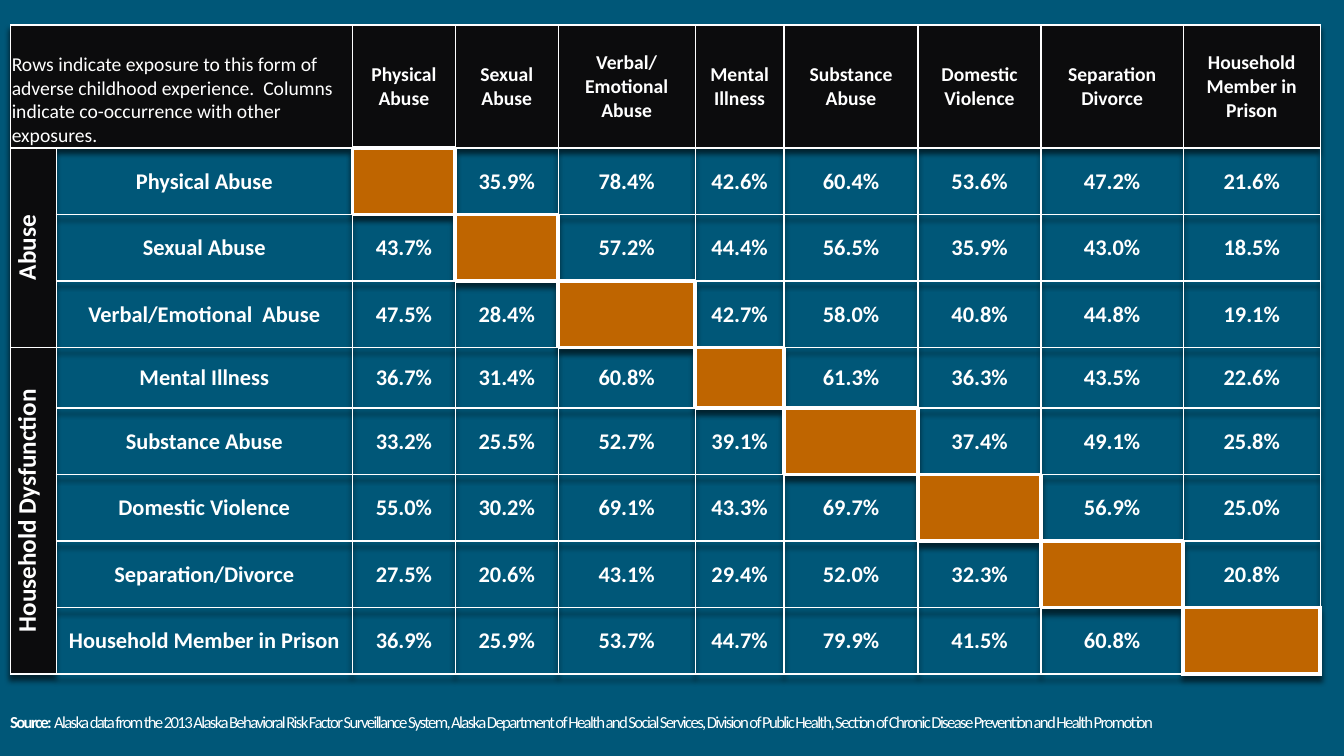
from dataclasses import dataclass

from lxml import etree
from pptx import Presentation, util as u
from pptx.dml.color import RGBColor
from pptx.enum import text
from pptx.oxml import parse_xml
from pptx.oxml.ns import nsdecls, qn

WIDTH, HEIGHT = u.Inches(13.33), u.Inches(7.5)
PLAIN_TABLE = "{2D5ABB26-0587-4C30-8999-92F81FD0307C}"
NEIGHBOURS = {"L": (0, -1), "R": (0, 1), "T": (-1, 0), "B": (1, 0)}

COLUMNS = [0.45, 2.94, 1.02, 1.02, 1.36, 0.88, 1.33, 1.22, 1.41, 1.36]
ROWS = [1.22, 0.66, 0.66, 0.66, 0.6, 0.66, 0.66, 0.66, 0.66]
LEGEND = ("Rows indicate exposure to this form of adverse childhood experience.  "
          "Columns indicate co-occurrence with other exposures.")
HEADINGS = ["Physical Abuse", "Sexual Abuse", "Verbal/ Emotional Abuse", "Mental Illness",
            "Substance Abuse", "Domestic Violence", "Separation Divorce",
            "Household Member in Prison"]
GROUPS = [("Abuse", 1, 3), ("Household Dysfunction", 4, 8)]
EXPOSURES = {
    "Physical Abuse": [35.9, 78.4, 42.6, 60.4, 53.6, 47.2, 21.6],
    "Sexual Abuse": [43.7, 57.2, 44.4, 56.5, 35.9, 43.0, 18.5],
    "Verbal/Emotional  Abuse": [47.5, 28.4, 42.7, 58.0, 40.8, 44.8, 19.1],
    "Mental Illness": [36.7, 31.4, 60.8, 61.3, 36.3, 43.5, 22.6],
    "Substance Abuse": [33.2, 25.5, 52.7, 39.1, 37.4, 49.1, 25.8],
    "Domestic Violence": [55.0, 30.2, 69.1, 43.3, 69.7, 56.9, 25.0],
    "Separation/Divorce": [27.5, 20.6, 43.1, 29.4, 52.0, 32.3, 20.8],
    "Household Member in Prison": [36.9, 25.9, 53.7, 44.7, 79.9, 41.5, 60.8],
}
SOURCE = ("Alaska data from the 2013 Alaska Behavioral Risk Factor Surveillance System, "
          "Alaska Department of Health and Social Services, Division of Public Health, "
          "Section of Chronic Disease Prevention and Health Promotion")


@dataclass(frozen=True)
class Theme:
    font: str = "Calibri"
    ground: str = "005778"
    header: str = "0C0C0D"
    diagonal: str = "BF6500"
    ink: str = "FFFFFF"
    source_size: int = 12
    header_size: int = 14
    body_size: int = 16
    group_size: int = 18
    thin: int = 1
    thick: int = 3


def assign(target, values):
    for name, value in values.items():
        setattr(target, name, value)


def on_diagonal(row, column):
    return row >= 1 and column == row + 1


class SlideBuilder:
    def __init__(self, slide, theme):
        self.slide, self.theme = slide, theme
        self.paint(slide.background.fill, theme.ground)

    def paint(self, fill, color):
        fill.solid()
        fill.fore_color.rgb = RGBColor.from_string(color)

    def add_words(self, paragraph, words, size, bold=True):
        run = paragraph.add_run()
        run.text = words
        assign(run.font, {"name": self.theme.font, "size": u.Pt(size), "bold": bold})
        run.font.color.rgb = RGBColor.from_string(self.theme.ink)
        return run

    def source_line(self, left, top, width, height, lead, words):
        """Turn the title into a source note; the box is in shares of the slide."""
        title = self.slide.shapes.title
        assign(title, {"left": int(left * WIDTH), "top": int(top * HEIGHT),
                       "width": int(width * WIDTH), "height": int(height * HEIGHT)})
        assign(title.text_frame, {"vertical_anchor": text.MSO_ANCHOR.MIDDLE,
                                  "word_wrap": True, "auto_size": text.MSO_AUTO_SIZE.NONE})
        paragraph = title.text_frame.paragraphs[0]
        assign(paragraph, {"line_spacing": 0.85, "alignment": text.PP_ALIGN.LEFT})
        for part, bold in ((lead, True), (words, False)):
            run = self.add_words(paragraph, part, self.theme.source_size, bold)
            run.font._element.set("spc", "-120")

    def table(self, left, top, columns, rows):
        """Add an unstyled, softly shadowed table; its corner is in shares of the slide."""
        frame = self.slide.shapes.add_table(
            len(rows), len(columns), int(left * WIDTH), int(top * HEIGHT),
            u.Inches(sum(columns)), u.Inches(sum(rows)))
        table = frame.table
        assign(table, {"first_row": False, "horz_banding": False})
        for column, width in zip(table.columns, columns):
            column.width = u.Inches(width)
        for row, height in zip(table.rows, rows):
            row.height = u.Inches(height)
        properties = table._tbl.tblPr
        properties.find(qn("a:tableStyleId")).text = PLAIN_TABLE
        properties.insert(0, parse_xml(
            f'<a:effectLst {nsdecls("a")}><a:outerShdw blurRad="50800" dist="50800" '
            'dir="5400000" algn="t" rotWithShape="0"><a:srgbClr val="000000">'
            '<a:alpha val="60000"/></a:srgbClr></a:outerShdw></a:effectLst>'))
        for row in range(len(rows)):
            for column in range(len(columns)):
                self.base_cell(table.cell(row, column), row, column)
        return table

    def base_cell(self, cell, row, column):
        theme = self.theme
        inset = u.Inches(0.01)
        assign(cell, {"margin_left": inset, "margin_right": inset, "margin_top": inset,
                      "margin_bottom": 0, "vertical_anchor": text.MSO_ANCHOR.MIDDLE})
        if on_diagonal(row, column):
            self.paint(cell.fill, theme.diagonal)
        elif row == 0 or column == 0:
            self.paint(cell.fill, theme.header)
        else:
            cell.fill.background()
        properties = cell._tc.get_or_add_tcPr()
        for index, (side, (down, right)) in enumerate(NEIGHBOURS.items()):
            heavy = on_diagonal(row, column) or on_diagonal(row + down, column + right)
            line = etree.Element(qn(f"a:ln{side}"))
            line.set("w", str(u.Pt(theme.thick if heavy else theme.thin)))
            fill = etree.SubElement(line, qn("a:solidFill"))
            etree.SubElement(fill, qn("a:srgbClr")).set("val", theme.ink)
            properties.insert(index, line)

    def fill_cell(self, cell, words, size, bold=True, align=text.PP_ALIGN.CENTER):
        paragraph = cell.text_frame.paragraphs[0]
        paragraph.alignment = align
        self.add_words(paragraph, words, size, bold)


def main():
    deck = Presentation()
    assign(deck, {"slide_width": WIDTH, "slide_height": HEIGHT})
    theme = Theme()
    builder = SlideBuilder(deck.slides.add_slide(deck.slide_layouts[5]), theme)
    builder.source_line(0, 0.923, 0.9, 0.067, "Source: ", SOURCE)
    matrix = builder.table(0.008, 0.033, COLUMNS, ROWS)

    legend = matrix.cell(0, 0)
    legend.merge(matrix.cell(0, 1))
    legend.vertical_anchor = text.MSO_ANCHOR.BOTTOM
    builder.fill_cell(legend, LEGEND, theme.header_size, False, text.PP_ALIGN.LEFT)
    for column, heading in enumerate(HEADINGS, 2):
        builder.fill_cell(matrix.cell(0, column), heading, theme.header_size)

    for group, first, last in GROUPS:
        label = matrix.cell(first, 0)
        label.merge(matrix.cell(last, 0))
        label._tc.get_or_add_tcPr().set("vert", "vert270")
        builder.fill_cell(label, group, theme.group_size)

    for row, (exposure, shares) in enumerate(EXPOSURES.items(), 1):
        builder.fill_cell(matrix.cell(row, 1), exposure, theme.body_size)
        others = [column for column in range(2, len(COLUMNS)) if not on_diagonal(row, column)]
        for column, share in zip(others, shares):
            builder.fill_cell(matrix.cell(row, column), f"{share:.1f}%", theme.body_size)

    deck.save("out.pptx")


if __name__ == "__main__":
    main()
